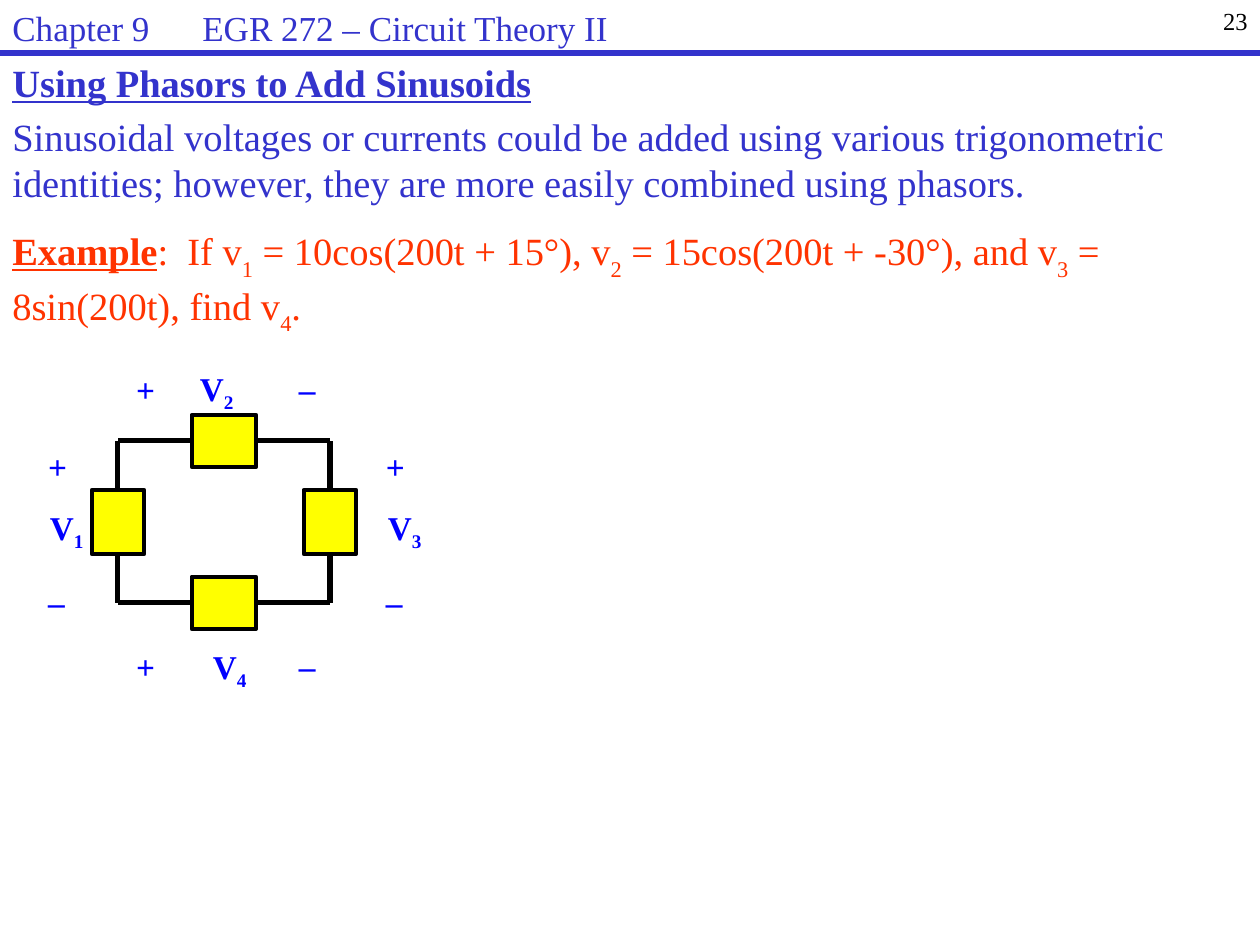
import pptx
import pptx.util
import pptx.dml.color
import pptx.enum.shapes
import pptx.enum.text
import pptx.oxml.ns
from lxml import etree
from dataclasses import dataclass

PX = 914400 // 126
MSO = pptx.enum.shapes.MSO_SHAPE
LINE = pptx.enum.shapes.MSO_CONNECTOR.STRAIGHT
ALIGN = pptx.enum.text.PP_ALIGN
FIT = pptx.enum.text.MSO_AUTO_SIZE


@dataclass(frozen=True)
class Theme:
    font: str = "Times New Roman"
    blue: str = "3333CC"
    red: str = "FF3300"
    label: str = "0000FF"
    black: str = "000000"
    yellow: str = "FFFF00"
    header_pt: int = 20
    body_pt: int = 22
    label_pt: int = 19
    number_pt: int = 14
    outline_pt: float = 2.63
    wire_pt: float = 2.88
    rule_pt: int = 3


T = Theme()

# Content: a paragraph is a list of (text, style); styles: h heading, s subscript
HEADER = [[("Chapter 9\tEGR 272 – Circuit Theory II", "")]]
NUMBER = [[("23", "")]]
INTRO = [
    [("Using Phasors to Add Sinusoids", "h")],
    [("Sinusoidal voltages or currents could be added using various trigonometric "
      "identities; however, they are more easily combined using phasors.", "")],
]
EXAMPLE = [[
    ("Example", "h"), (":  If v", ""), ("1", "s"),
    (" = 10cos(200t + 15°), v", ""), ("2", "s"),
    (" = 15cos(200t + -30°), and v", ""), ("3", "s"),
    (" = 8sin(200t), find v", ""), ("4", "s"), (".", ""),
]]

# Circuit loop: left, top, right, bottom of the wires
LEFT, TOP, RIGHT, BOTTOM = 118, 441, 330, 603
MID_X, MID_Y = (LEFT + RIGHT) // 2, (TOP + BOTTOM) // 2
LONG, SHORT = 64, 52
# centre, size, then (connection site, loop corner) for both wires
ELEMENTS = [
    ((MID_X, y), (LONG, SHORT), ((1, (LEFT, y)), (3, (RIGHT, y))))
    for y in (TOP, BOTTOM)
] + [
    ((x, MID_Y), (SHORT, LONG), ((0, (x, TOP)), (2, (x, BOTTOM))))
    for x in (LEFT, RIGHT)
]
# voltage number: positions of V, plus and minus
VOLTAGES = {
    "1": ((50, 507), (48, 446), (48, 570)),
    "3": ((388, 507), (386, 446), (386, 570)),
    "2": ((200, 368), (136, 369), (299, 357)),
    "4": ((213, 646), (136, 646), (299, 634)),
}


def rgb(color):
    return pptx.dml.color.RGBColor.from_string(color)


def add_runs(p, runs, size, color, bold=False, sub=-30):
    for text, style in runs:
        r = p.add_run()
        r.text = text
        f = r.font
        f.name, f.size = T.font, pptx.util.Pt(size)
        f.color.rgb = rgb(color)
        f.bold = bold or style == "h"
        f.underline = style == "h"
        if style == "s":
            r._r.get_or_add_rPr().set("baseline", str(sub * 1000))


def add_text(s, box, paragraphs, size, color, align=ALIGN.LEFT, tab=None):
    tf = s.shapes.add_textbox(*(v * PX for v in box)).text_frame
    tf.word_wrap = True
    for i, runs in enumerate(paragraphs):
        p = tf.add_paragraph() if i else tf.paragraphs[0]
        p.alignment = align
        p.space_before = pptx.util.Pt(size * 0.2)
        if tab:
            stops = etree.SubElement(p._p.get_or_add_pPr(), pptx.oxml.ns.qn("a:tabLst"))
            etree.SubElement(stops, pptx.oxml.ns.qn("a:tab"), pos=str(tab * PX), algn="l")
        add_runs(p, runs, size, color)


def add_label(s, pos, size, runs):
    sp = s.shapes.add_textbox(*(v * PX for v in pos + size))
    tf = sp.text_frame
    tf.margin_left = tf.margin_top = tf.margin_right = tf.margin_bottom = 0
    tf.word_wrap = False
    tf.auto_size = FIT.SHAPE_TO_FIT_TEXT
    add_runs(tf.paragraphs[0], runs, T.label_pt, T.label, bold=True, sub=-25)


def add_line(s, start, end, color, width):
    c = s.shapes.add_connector(LINE, *(v * PX for v in start + end))
    c.line.color.rgb = rgb(color)
    c.line.width = pptx.util.Pt(width)
    etree.SubElement(c._element.spPr, pptx.oxml.ns.qn("a:effectLst"))
    return c


def add_element(s, center, size, wires):
    (x, y), (w, h) = center, size
    sp = s.shapes.add_shape(MSO.RECTANGLE, (x - w // 2) * PX, (y - h // 2) * PX, w * PX, h * PX)
    sp.shadow.inherit = False
    sp.fill.solid()
    sp.fill.fore_color.rgb = rgb(T.yellow)
    sp.line.color.rgb = rgb(T.black)
    sp.line.width = pptx.util.Pt(T.outline_pt)
    for site, corner in wires:
        add_line(s, center, corner, T.black, T.wire_pt).begin_connect(sp, site)


def main():
    prs = pptx.Presentation()
    prs.slide_width, prs.slide_height = 1260 * PX, 945 * PX
    s = prs.slides.add_slide(prs.slide_layouts[6])

    # Body text
    add_text(s, (0, 53, 1260, 189), INTRO, T.body_pt, T.blue)
    add_text(s, (0, 221, 1260, 126), EXAMPLE, T.body_pt, T.red)

    # Circuit
    for element in ELEMENTS:
        add_element(s, *element)
    for number, (name, plus, minus) in VOLTAGES.items():
        add_label(s, name, (35, 40), [("V", ""), (number, "s")])
        add_label(s, plus, (33, 45), [("+", "")])
        add_label(s, minus, (32, 45), [("_", "")])

    # Header
    add_text(s, (998, 0, 262, 53), NUMBER, T.number_pt, T.black, ALIGN.RIGHT)
    add_line(s, (0, 53), (1260, 53), T.blue, T.rule_pt)
    add_text(s, (0, 0, 924, 42), HEADER, T.header_pt, T.blue, tab=190)

    prs.save("out.pptx")


if __name__ == "__main__":
    main()
